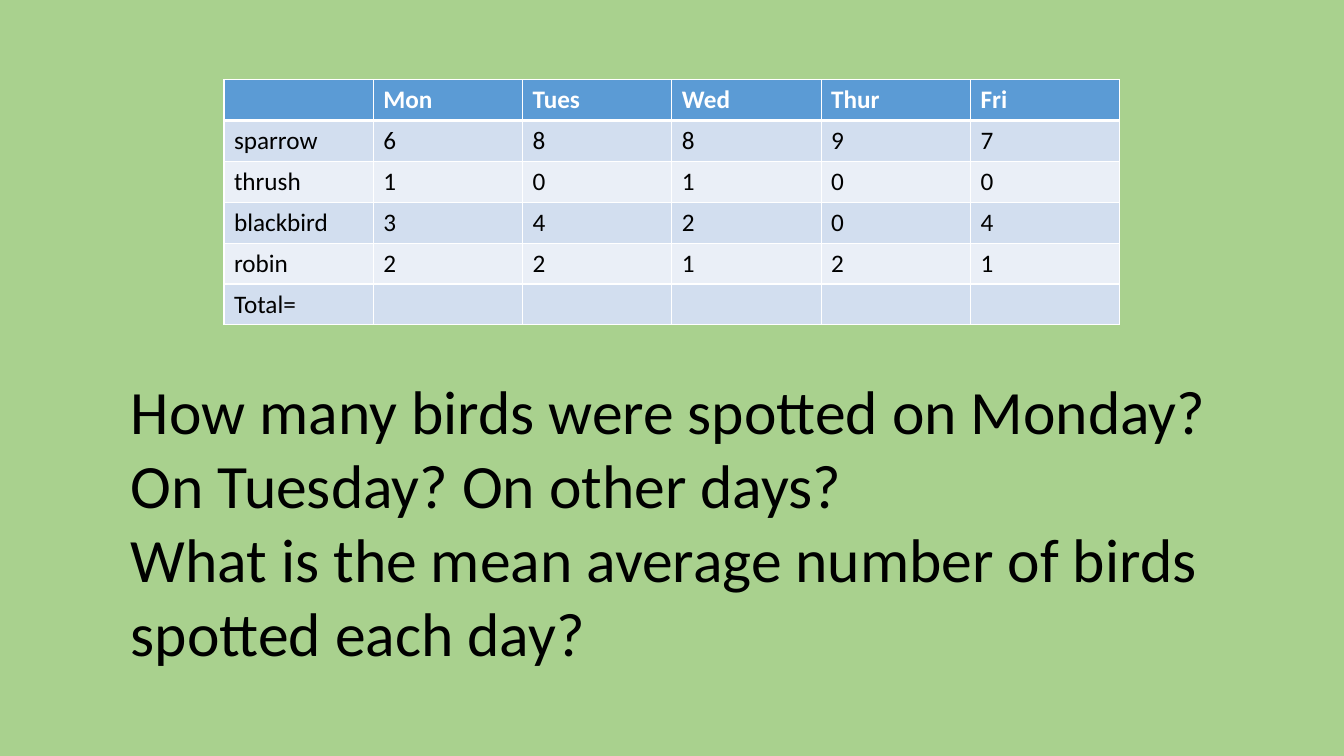
from dataclasses import dataclass

from lxml.etree import SubElement
from pptx import Presentation
from pptx.dml.color import RGBColor
from pptx.enum.text import MSO_AUTO_SIZE
from pptx.oxml.ns import qn
from pptx.slide import Slide
from pptx.table import _Cell
from pptx.text.text import _Paragraph
from pptx.util import Pt

BACKGROUND = RGBColor(0xA9, 0xD1, 0x8E)
HEADER_BLUE = RGBColor(0x5B, 0x9B, 0xD5)
BAND_DARK = RGBColor(0xD2, 0xDE, 0xEF)
BAND_LIGHT = RGBColor(0xEA, 0xEF, 0xF7)
WHITE = RGBColor(0xFF, 0xFF, 0xFF)
BLACK = RGBColor(0x00, 0x00, 0x00)
FONT = "Calibri"
COLUMN_WIDTH = 106.66
ROW_HEIGHT = 29.2


@dataclass(frozen=True)
class TableRow:
    texts: tuple[str, ...]
    fill: RGBColor
    color: RGBColor = BLACK
    bold: bool = False
    top: float = 1
    bottom: float = 1


BIRD_ROWS = (
    TableRow(("", "Mon", "Tues", "Wed", "Thur", "Fri"), HEADER_BLUE, WHITE, True, bottom=3),
    TableRow(("sparrow", "6", "8", "8", "9", "7"), BAND_DARK, top=3),
    TableRow(("thrush", "1", "0", "1", "0", "0"), BAND_LIGHT),
    TableRow(("blackbird", "3", "4", "2", "0", "4"), BAND_DARK),
    TableRow(("robin", "2", "2", "1", "2", "1"), BAND_LIGHT),
    TableRow(("Total=", "", "", "", "", ""), BAND_DARK),
)
QUESTIONS = (
    "How many birds were spotted on Monday? On Tuesday? On other days?",
    "What is the mean average number of birds spotted each day?",
)


def write_text(paragraph: _Paragraph, text: str, *, size: float,
               color: RGBColor = BLACK, bold: bool = False) -> None:
    run = paragraph.add_run()
    run.text = text
    run.font.name = FONT
    run.font.size = Pt(size)
    run.font.bold = bold
    run.font.color.rgb = color


def set_borders(cell: _Cell, widths: dict[str, float]) -> None:
    properties = cell._tc.get_or_add_tcPr()
    for side, width in widths.items():
        line = SubElement(properties, qn(f"a:ln{side}"), w=str(Pt(width)))
        fill = SubElement(line, qn("a:solidFill"))
        SubElement(fill, qn("a:srgbClr"), val=str(WHITE))


def add_bird_table(slide: Slide, rows: tuple[TableRow, ...]) -> None:
    column_count = len(rows[0].texts)
    frame = slide.shapes.add_table(
        len(rows), column_count, Pt(160), Pt(56.9),
        Pt(COLUMN_WIDTH * column_count), Pt(ROW_HEIGHT * len(rows)))
    table = frame.table
    for column in table.columns:
        column.width = Pt(COLUMN_WIDTH)
    for row_index, row in enumerate(rows):
        table.rows[row_index].height = Pt(ROW_HEIGHT)
        for column_index, text in enumerate(row.texts):
            cell = table.cell(row_index, column_index)
            set_borders(cell, {"L": 1, "R": 1, "T": row.top, "B": row.bottom})
            cell.fill.solid()
            cell.fill.fore_color.rgb = row.fill
            if text:
                write_text(cell.text_frame.paragraphs[0], text, size=18,
                           color=row.color, bold=row.bold)


def add_questions(slide: Slide, questions: tuple[str, ...]) -> None:
    shape = slide.shapes.add_textbox(Pt(86.4), Pt(262.8), Pt(810.7), Pt(220.3))
    text_frame = shape.text_frame
    text_frame.word_wrap = True
    text_frame.auto_size = MSO_AUTO_SIZE.SHAPE_TO_FIT_TEXT
    for index, question in enumerate(questions):
        paragraph = text_frame.add_paragraph() if index else text_frame.paragraphs[0]
        write_text(paragraph, question, size=44)


def main() -> None:
    presentation = Presentation()
    presentation.slide_width = Pt(960)
    presentation.slide_height = Pt(540)
    slide = presentation.slides.add_slide(presentation.slide_layouts[6])
    slide.background.fill.solid()
    slide.background.fill.fore_color.rgb = BACKGROUND
    add_bird_table(slide, BIRD_ROWS)
    add_questions(slide, QUESTIONS)
    presentation.save("out.pptx")


if __name__ == "__main__":
    main()
